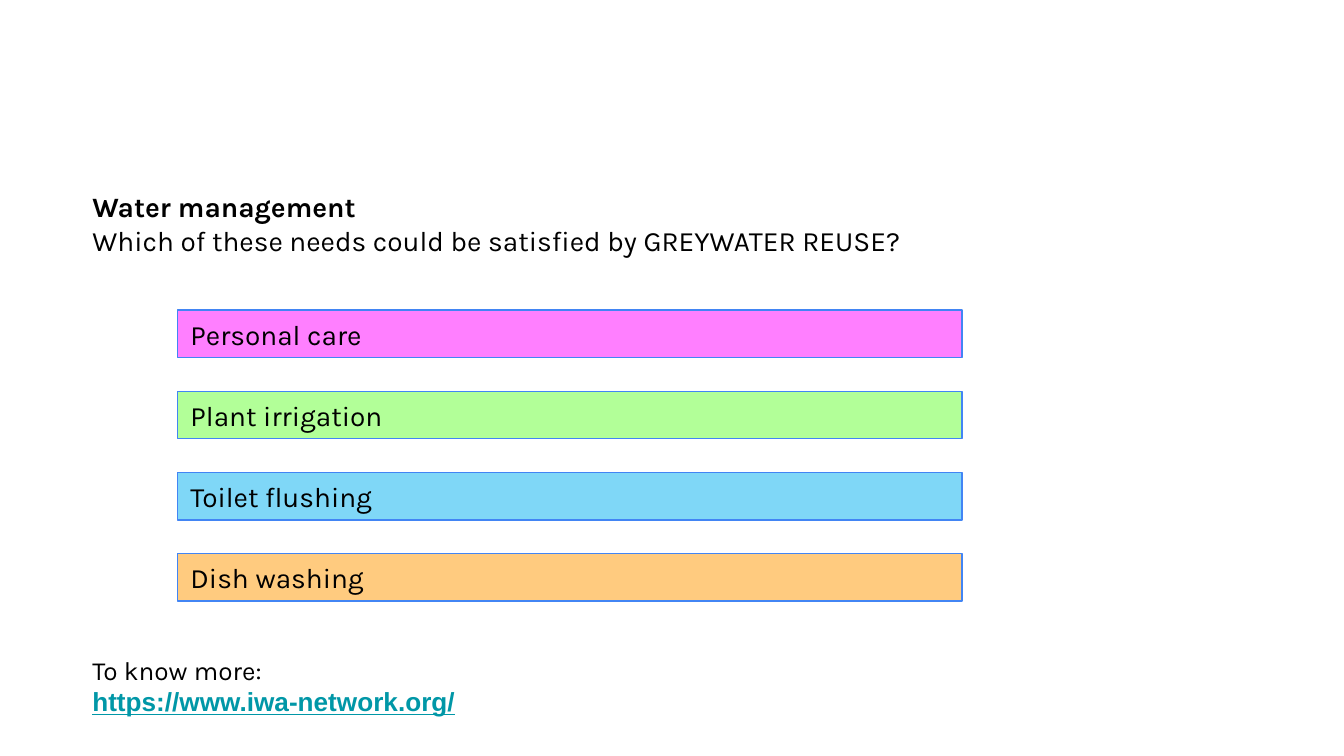
import pptx
import pptx.util
import pptx.dml.color
import pptx.enum.shapes
import pptx.enum.text
import pptx.oxml.ns
import lxml.etree

Pt = pptx.util.Pt
RGB = pptx.dml.color.RGBColor.from_string
enum = pptx.enum.text

theme = {
    "ink": "000000", "link": "0097A7", "edge": "4285F4",
    "pink": "FF00FF", "green": "66FF33", "blue": "00B0F0", "orange": "FF9900",
    "alpha": 50000, "font": "Karla", "url": "Arial", "main": 15, "note": 14,
}


def write(frame, lines, anchor, **inset):
    """Fill a frame with (text, font values) lines, aligned left."""
    values = {"word_wrap": True, "vertical_anchor": anchor,
              "auto_size": enum.MSO_AUTO_SIZE.NONE, **inset}
    for name, value in values.items():
        setattr(frame, name, value)
    for i, (text, font) in enumerate(lines):
        para = frame.paragraphs[0] if i == 0 else frame.add_paragraph()
        para.alignment = enum.PP_ALIGN.LEFT
        run = para.add_run()
        run.text = text
        look = {"name": theme["font"], "size": Pt(theme["main"]), "bold": False, **font}
        color = look.pop("color", theme["ink"])
        for name, value in look.items():
            setattr(run.font, name, value)
        run.font.color.rgb = RGB(color)


deck = pptx.Presentation()
deck.slide_width, deck.slide_height = Pt(720), Pt(405)
slide = deck.slides.add_slide(deck.slide_layouts[5])
flush = {"margin_left": 0, "margin_right": Pt(7.2),
         "margin_top": Pt(3.6), "margin_bottom": Pt(3.6)}

# Heading and question
title = slide.shapes.title
place = {"left": 49.5, "top": 98, "width": 632, "height": 44}
for name, value in place.items():
    setattr(title, name, Pt(value))
write(title.text_frame, [
    ("Water management", {"bold": True}),
    ("Which of these needs could be satisfied by GREYWATER REUSE?", {}),
], enum.MSO_ANCHOR.TOP, **flush)

# Answer bars, evenly spaced
needs = [("Personal care", "pink"), ("Plant irrigation", "green"),
         ("Toilet flushing", "blue"), ("Dish washing", "orange")]
for i, (need, tint) in enumerate(needs):
    bar = slide.shapes.add_shape(pptx.enum.shapes.MSO_SHAPE.RECTANGLE,
                                 Pt(95), Pt(166.2 + 43.5 * i), Pt(420.5), Pt(25.4))
    bar.shadow.inherit = False
    bar.fill.solid()
    bar.fill.fore_color.rgb = RGB(theme[tint])
    solid = bar.fill._xPr.find(pptx.oxml.ns.qn("a:solidFill"))
    lxml.etree.SubElement(solid[0], pptx.oxml.ns.qn("a:alpha"), val=str(theme["alpha"]))
    bar.line.color.rgb = RGB(theme["edge"])
    bar.line.width = Pt(0.75)
    write(bar.text_frame, [(need, {})], enum.MSO_ANCHOR.MIDDLE)

# Further reading
more = slide.shapes.add_textbox(Pt(49.5), Pt(347), Pt(670), Pt(41))
size = Pt(theme["note"])
write(more.text_frame, [
    ("To know more:", {"size": size}),
    ("https://www.iwa-network.org/", {"size": size, "name": theme["url"], "bold": True,
                                      "underline": True, "color": theme["link"]}),
], enum.MSO_ANCHOR.TOP, **flush)

deck.save("out.pptx")
